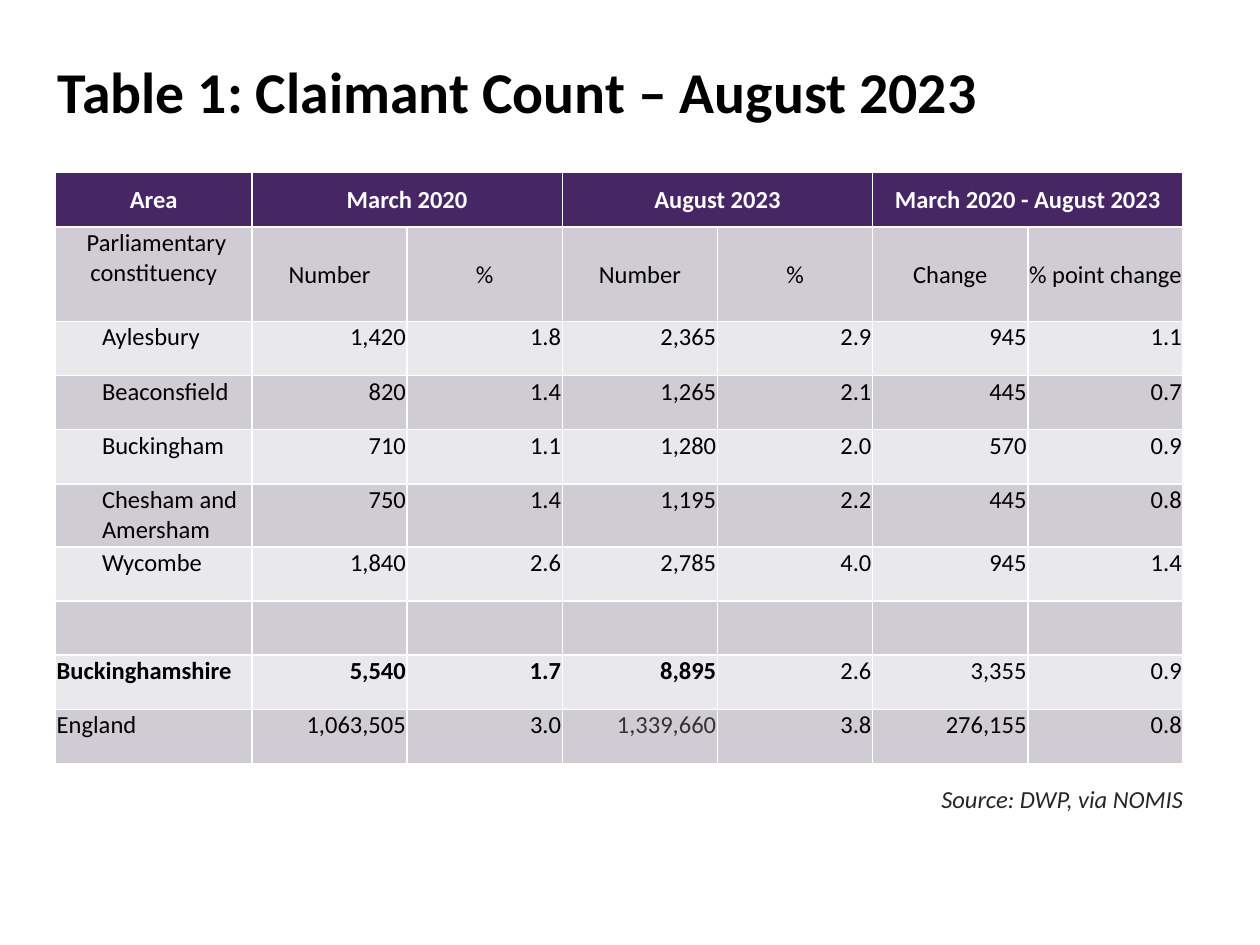
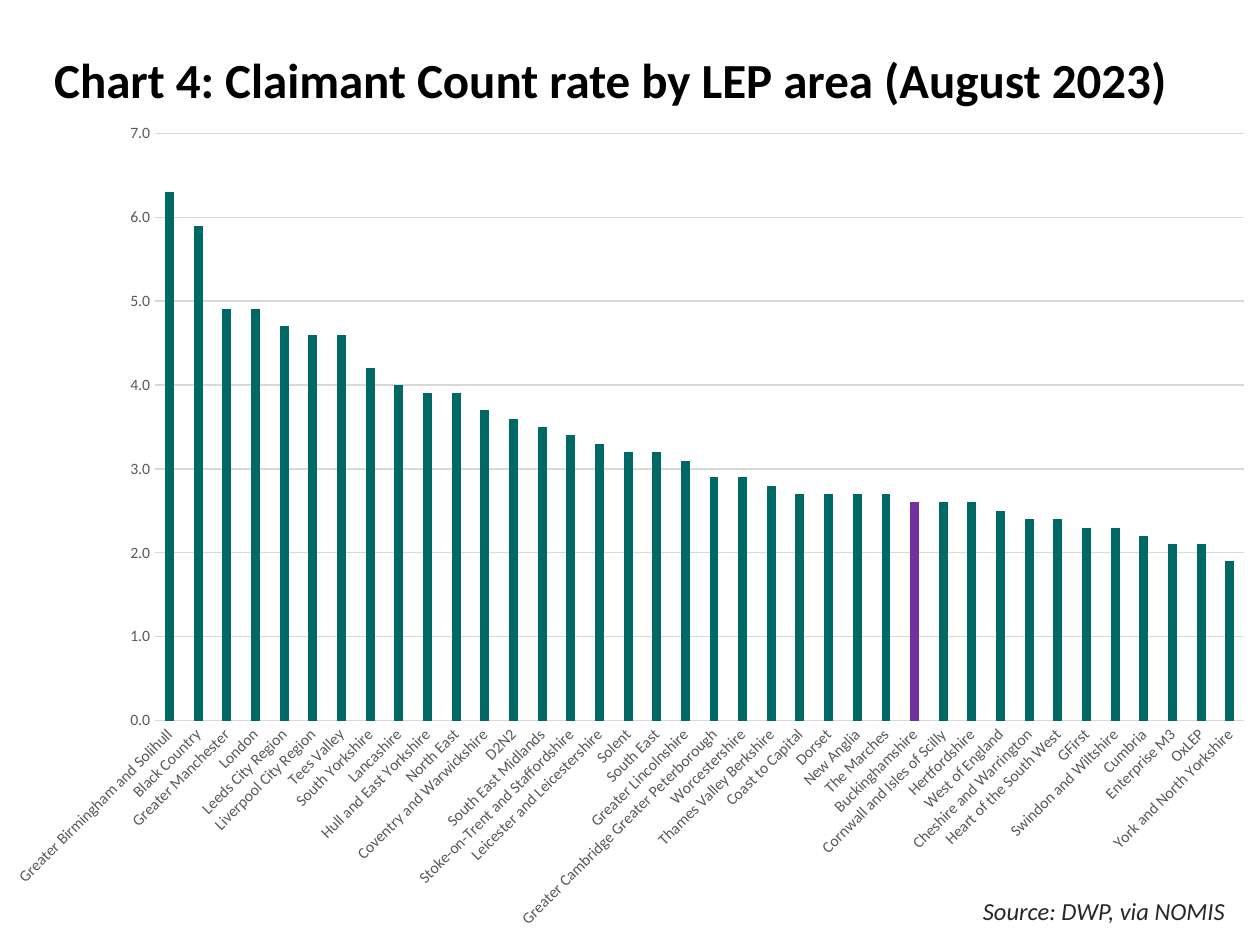
from lxml import etree
from pptx import Presentation
from pptx.chart.data import CategoryChartData
from pptx.dml.color import RGBColor
from pptx.enum.chart import XL_CHART_TYPE as ChartType, XL_TICK_MARK as TickMark
from pptx.enum.text import MSO_ANCHOR as Anchor, MSO_AUTO_SIZE as AutoSize, PP_ALIGN as Align
from pptx.oxml.ns import qn
from pptx.util import Inches, Pt

FONT = "Calibri"
BLACK = RGBColor(0x00, 0x00, 0x00)
WHITE = RGBColor(0xFF, 0xFF, 0xFF)
PURPLE = RGBColor(0x47, 0x26, 0x65)
DARK_BAND = RGBColor(0xCF, 0xCD, 0xD3)
LIGHT_BAND = RGBColor(0xE9, 0xE8, 0xEA)
CHARCOAL = RGBColor(0x33, 0x33, 0x33)
SOURCE_GREY = RGBColor(0x26, 0x26, 0x26)
AXIS_GREY = RGBColor(0x59, 0x59, 0x59)
GRID_GREY = RGBColor(0xD9, 0xD9, 0xD9)
TEAL = RGBColor(0x00, 0x69, 0x65)
HIGHLIGHT = RGBColor(0x70, 0x30, 0xA0)

PERIODS = ["March 2020", "August 2023", "March 2020 - August 2023"]
MEASURES = ["\u00a0Parliamentary constituency", "Number", "%", "Number", "%",
            "Change", "% point change"]
CONSTITUENCIES = [
    ["Aylesbury", "1,420", "1.8", "2,365", "2.9", "945", "1.1"],
    ["Beaconsfield", "820", "1.4", "1,265", "2.1", "445", "0.7"],
    ["Buckingham", "710", "1.1", "1,280", "2.0", "570", "0.9"],
    ["Chesham and Amersham", "750", "1.4", "1,195", "2.2", "445", "0.8"],
    ["Wycombe", "1,840", "2.6", "2,785", "4.0", "945", "1.4"],
]
TOTALS = [
    ["Buckinghamshire", "5,540", "1.7", "8,895", "2.6", "3,355", "0.9"],
    ["England", "1,063,505", "3.0", "1,339,660", "3.8", "276,155", "0.8"],
]
ROW_HEIGHTS = [0.43, 0.75, 0.43, 0.43, 0.43, 0.5, 0.43, 0.43, 0.43, 0.43]
AREA_WIDTH = 1.56

LEP_RATES = {
    "Greater Birmingham and Solihull": 6.3, "Black Country": 5.9,
    "Greater Manchester": 4.9, "London": 4.9, "Leeds City Region": 4.7,
    "Liverpool City Region": 4.6, "Tees Valley": 4.6, "South Yorkshire": 4.2,
    "Lancashire": 4, "Hull and East Yorkshire": 3.9, "North East": 3.9,
    "Coventry and Warwickshire": 3.7, "D2N2": 3.6, "South East Midlands": 3.5,
    "Stoke-on-Trent and Staffordshire": 3.4, "Leicester and Leicestershire": 3.3,
    "Solent": 3.2, "South East": 3.2, "Greater Lincolnshire": 3.1,
    "Greater Cambridge Greater Peterborough": 2.9, "Worcestershire": 2.9,
    "Thames Valley Berkshire": 2.8, "Coast to Capital": 2.7, "Dorset": 2.7,
    "New Anglia": 2.7, "The Marches": 2.7, "Buckinghamshire": 2.6,
    "Cornwall and Isles of Scilly": 2.6, "Hertfordshire": 2.6,
    "West of England": 2.5, "Cheshire and Warrington": 2.4,
    "Heart of the South West": 2.4, "GFirst": 2.3, "Swindon and Wiltshire": 2.3,
    "Cumbria": 2.2, "Enterprise M3": 2.1, "OxLEP": 2.1,
    "York and North Yorkshire": 1.9,
}
PLOT_LAYOUT = {"x": 0.129, "y": 0.03, "w": 0.85, "h": 0.702}


def apply(target, formats):
    for name, value in formats.items():
        setattr(target, name, value)


def style_font(font, size, color, **formats):
    apply(font, {"name": FONT, "size": Pt(size), **formats})
    font.color.rgb = color


def add_titled_slide(deck, heading, box, size):
    slide = deck.slides.add_slide(deck.slide_layouts[5])
    title = slide.shapes.title
    apply(title, dict(zip(("left", "top", "width", "height"), map(Inches, box))))
    frame = title.text_frame
    frame.text = heading
    apply(frame, {"auto_size": AutoSize.NONE, "word_wrap": True,
                  "vertical_anchor": Anchor.MIDDLE})
    line = frame.paragraphs[0]
    apply(line, {"alignment": Align.LEFT, "line_spacing": 0.9})
    style_font(line.runs[0].font, size, BLACK, bold=True)
    return slide


def add_source(slide, left, top):
    frame = slide.shapes.add_textbox(*map(Inches, (left, top, 2.38, 0.34))).text_frame
    frame.word_wrap = True
    line = frame.paragraphs[0]
    line.alignment = Align.RIGHT
    credit = line.add_run()
    credit.text = "Source: DWP, via NOMIS"
    style_font(credit.font, 14, SOURCE_GREY, italic=True)


def fill_cell(cell, words, band, align, anchor=Anchor.TOP, color=BLACK, bold=False, indent=0.01):
    cell.fill.solid()
    cell.fill.fore_color.rgb = band
    apply(cell, {"margin_left": Inches(indent), "margin_right": Inches(0.01),
                 "margin_top": Inches(0.01), "margin_bottom": 0,
                 "vertical_anchor": anchor})
    line = cell.text_frame.paragraphs[0]
    line.alignment = align
    style_font(line.font, 14, color, bold=bold)
    if words:
        run = line.add_run()
        run.text = words
        style_font(run.font, 14, color, bold=bold)


def add_claimant_table(slide, box):
    body = CONSTITUENCIES + [[""] * len(MEASURES)] + TOTALS
    table = slide.shapes.add_table(len(ROW_HEIGHTS), len(MEASURES), *map(Inches, box)).table
    for row, height in zip(table.rows, ROW_HEIGHTS):
        row.height = Inches(height)
    measure_width = (box[2] - AREA_WIDTH) / (len(MEASURES) - 1)
    for index, column in enumerate(table.columns):
        column.width = Inches(measure_width if index else AREA_WIDTH)

    fill_cell(table.cell(0, 0), "Area", PURPLE, Align.CENTER, Anchor.MIDDLE, WHITE, True)
    for index, period in enumerate(PERIODS):
        first = 1 + 2 * index
        table.cell(0, first).merge(table.cell(0, first + 1))
        fill_cell(table.cell(0, first), period, PURPLE, Align.CENTER, Anchor.MIDDLE, WHITE, True)

    for col, measure in enumerate(MEASURES):
        anchor = Anchor.MIDDLE if col else Anchor.TOP
        fill_cell(table.cell(1, col), measure, DARK_BAND, Align.CENTER, anchor)

    for row, values in enumerate(body, start=2):
        band = DARK_BAND if row % 2 else LIGHT_BAND
        for col, value in enumerate(values):
            fill_cell(
                table.cell(row, col), value, band,
                Align.RIGHT if col else Align.LEFT,
                color=CHARCOAL if value == "1,339,660" else BLACK,
                bold=values[0] == "Buckinghamshire" and col < 4,
                indent=0.37 if col == 0 and values in CONSTITUENCIES else 0.01)


def set_plot_layout(chart):
    plot_area = chart.plots[0]._element.getparent()
    layout = plot_area.find(qn("c:layout"))
    if layout is None:
        layout = etree.Element(qn("c:layout"))
        plot_area.insert(0, layout)
    manual = etree.SubElement(layout, qn("c:manualLayout"))
    settings = {"layoutTarget": "inner", "xMode": "edge", "yMode": "edge", **PLOT_LAYOUT}
    for name, value in settings.items():
        etree.SubElement(manual, qn(f"c:{name}")).set("val", str(value))


def add_rate_chart(slide, box):
    rates = CategoryChartData(number_format="0.0")
    rates.categories = list(LEP_RATES)
    rates.add_series("Series 1", list(LEP_RATES.values()))
    chart = slide.shapes.add_chart(
        ChartType.COLUMN_CLUSTERED, *map(Inches, box), rates).chart
    apply(chart, {"has_legend": False, "has_title": False})
    style_font(chart.font, 10, BLACK)

    columns = chart.plots[0]
    apply(columns, {"gap_width": 219, "overlap": -27, "vary_by_categories": False})
    series = columns.series[0]
    buckinghamshire = series.points[list(LEP_RATES).index("Buckinghamshire")]
    for part, color in ((series, TEAL), (buckinghamshire, HIGHLIGHT)):
        part.format.fill.solid()
        part.format.fill.fore_color.rgb = color

    areas, scale = chart.category_axis, chart.value_axis
    for axis in (areas, scale):
        apply(axis, {"major_tick_mark": TickMark.NONE, "minor_tick_mark": TickMark.NONE})
        style_font(axis.tick_labels.font, 9, AXIS_GREY)
    areas._element.find(qn("c:txPr")).find(qn("a:bodyPr")).set("rot", str(-45 * 60000))
    apply(scale, {"minimum_scale": 0, "maximum_scale": 7, "major_unit": 1,
                  "has_major_gridlines": True})
    apply(scale.tick_labels, {"number_format": "#,##0.0", "number_format_is_linked": False})
    scale.format.line.fill.background()
    for line in (areas.format.line, scale.major_gridlines.format.line):
        line.color.rgb = GRID_GREY
        line.width = Pt(0.75)
    set_plot_layout(chart)


def build_table_slide(deck):
    slide = add_titled_slide(
        deck, "Table 1: Claimant Count – August 2023", (0.36, 0.24, 8.62, 1.02), 33)
    add_claimant_table(slide, (0.44, 1.37, 8.95, 4.7))
    add_source(slide, 7.11, 6.17)


def build_chart_slide(deck):
    slide = add_titled_slide(
        deck, "Chart 4: Claimant Count rate by LEP area (August 2023)",
        (0.33, 0.27, 9.36, 0.77), 28)
    slide.shapes.title.fill.solid()
    slide.shapes.title.fill.fore_color.rgb = WHITE
    add_source(slide, 7.44, 7.06)
    add_rate_chart(slide, (-0.08, 0.86, 10.17, 6.64))


def main():
    deck = Presentation()
    apply(deck, {"slide_width": Inches(10), "slide_height": Inches(7.5)})
    build_table_slide(deck)
    build_chart_slide(deck)
    deck.save("out.pptx")


if __name__ == "__main__":
    main()
